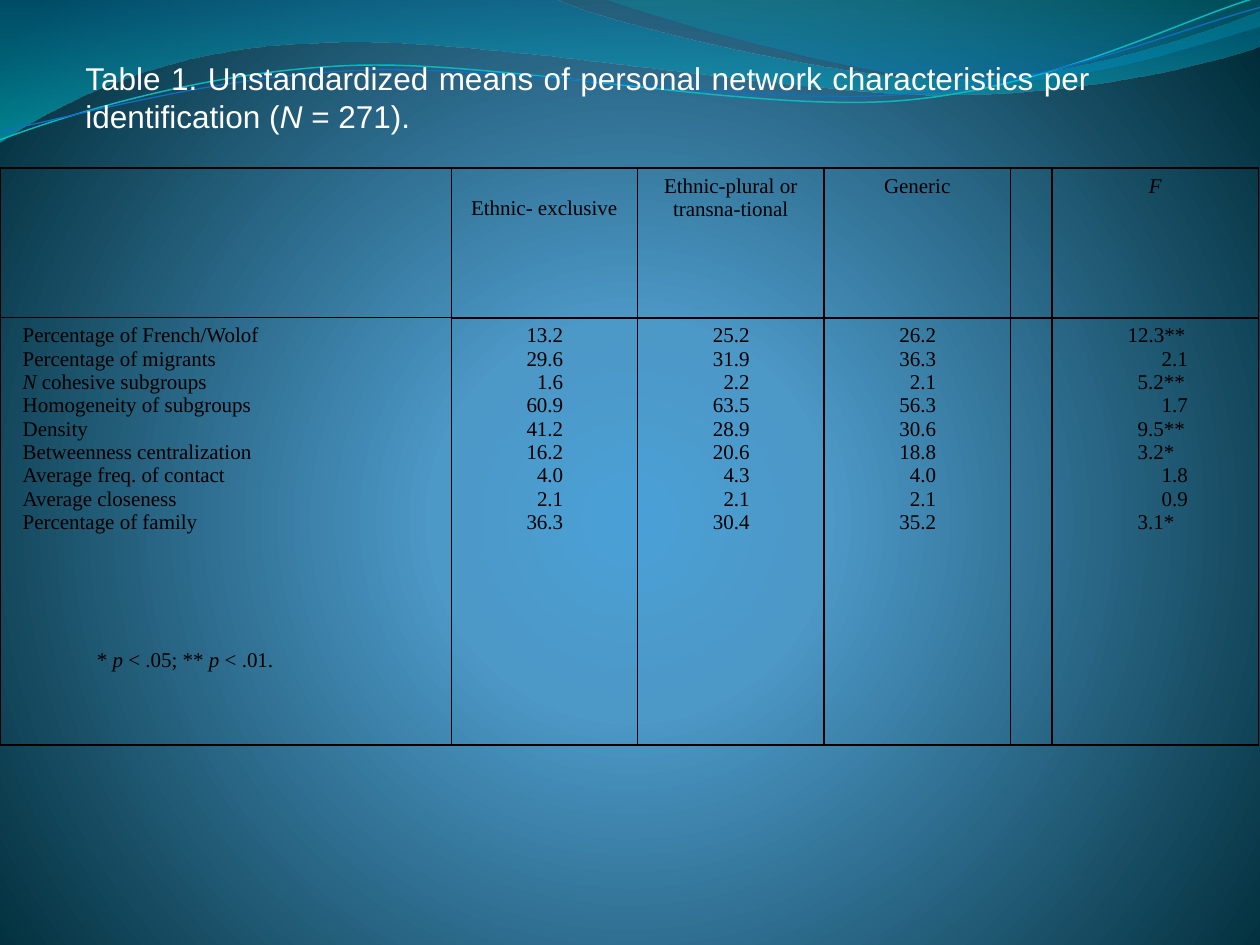
from math import cos, radians, sin

from lxml import etree
from pptx import Presentation
from pptx.dml.color import RGBColor
from pptx.enum.text import MSO_ANCHOR, MSO_AUTO_SIZE, PP_ALIGN
from pptx.oxml.ns import qn
from pptx.util import Inches, Pt

CENTER, JUSTIFY = PP_ALIGN.CENTER, PP_ALIGN.JUSTIFY
LEFT, RIGHT = PP_ALIGN.LEFT, PP_ALIGN.RIGHT
MIDDLE = MSO_ANCHOR.MIDDLE
GROW = MSO_AUTO_SIZE.SHAPE_TO_FIT_TEXT
TILT = 357.3

COL_WIDTHS = [3.58, 1.48, 1.48, 1.48, 0.33, 1.64]
ROW_HEIGHTS = [1.19, 3.39]
HEADERS = ["", "Ethnic- exclusive", "Ethnic-plural or transna-tional", "Generic", "", "_F_"]
ROWS = [
    ("Percentage of French/Wolof", "13.2", "25.2", "26.2", "12.3**"),
    ("Percentage of migrants", "29.6", "31.9", "36.3", "2.1"),
    ("_N_ cohesive subgroups", "1.6", "2.2", "2.1", "5.2**"),
    ("Homogeneity of subgroups", "60.9", "63.5", "56.3", "1.7"),
    ("Density", "41.2", "28.9", "30.6", "9.5**"),
    ("Betweenness centralization", "16.2", "20.6", "18.8", "3.2*"),
    ("Average freq. of contact", "4.0", "4.3", "4.0", "1.8"),
    ("Average closeness", "2.1", "2.1", "2.1", "0.9"),
    ("Percentage of family", "36.3", "30.4", "35.2", "3.1*"),
]

WIDE_WAVE = [
    (0, 0), (4.4, -0.01),
    (4.76, 0.17, 6.64, 0.63, 7.58, 0.63), (8.53, 0.63, 9.58, 0.26, 10, 0.09),
    (10.01, 0.36),
    (9.83, 0.44, 8.7, 0.76, 7.46, 0.75), (6.22, 0.75, 3.82, 0.28, 2.57, 0.34),
    (1.29, 0.36, 0.46, 0.83, -0.01, 1.13), (0, 0),
]
CORNER_WAVE = [
    (4.79, -0.01),
    (5.09, 0.11, 6.82, 0.62, 7.69, 0.65), (8.56, 0.69, 9.61, 0.32, 10, 0.21),
    (10, 0), (4.79, -0.01),
]
TEAL_LINE = [
    (0, 1.11),
    (0.48, 0.93, 1.58, 0.57, 2.77, 0.52), (3.95, 0.47, 5.93, 0.89, 7.13, 0.8),
    (8.33, 0.71, 9.38, 0.15, 9.98, -0.02),
]
BLUE_LINE = [
    (0, 1.04),
    (0.47, 0.96, 1.64, 0.61, 2.83, 0.56), (4.03, 0.51, 5.97, 0.84, 7.17, 0.75),
    (8.36, 0.67, 9.41, 0.21, 10, 0.06),
]


def rgb(value):
    return RGBColor.from_string(value)


def add_node(parent, tag, **attrs):
    node = etree.SubElement(parent, qn(tag))
    for name, value in attrs.items():
        node.set(name, str(value))
    return node


def set_gradient(fill, element, stops, focus=None):
    fill.solid()
    solid = next(element.iter(qn("a:solidFill")))
    grad = etree.Element(qn("a:gradFill"), rotWithShape="1")
    stop_list = add_node(grad, "a:gsLst")
    for position, color, opacity in stops:
        stop = add_node(stop_list, "a:gs", pos=position * 1000)
        clr = add_node(stop, "a:srgbClr", val=color)
        if opacity < 100:
            add_node(clr, "a:alpha", val=opacity * 1000)
    if focus:
        sides = {side: v * 1000 for side, v in zip("ltrb", focus)}
        add_node(add_node(grad, "a:path", path="circle"), "a:fillToRect", **sides)
    else:
        add_node(grad, "a:lin", ang=90 * 60000, scaled=0)
    solid.getparent().replace(solid, grad)


def untilt(segments, center):
    turn = radians(360 - TILT)
    cx, cy = center
    result = []
    for seg in segments:
        moved = []
        for x, y in zip(seg[::2], seg[1::2]):
            dx, dy = x - cx, y - cy
            moved += [cx + dx * cos(turn) - dy * sin(turn), cy + dx * sin(turn) + dy * cos(turn)]
        result.append(tuple(moved))
    return result


def add_outline(s, segments, closed):
    points = [(Inches(x), Inches(y)) for seg in segments for x, y in zip(seg[::2], seg[1::2])]
    builder = s.shapes.build_freeform(*points[0])
    builder.add_line_segments(points[1:], close=closed)
    sp = builder.convert_to_shape()
    sp.shadow.inherit = False
    steps = list(sp.element.iter(qn("a:lnTo")))
    for seg in segments[1:]:
        group, steps = steps[:len(seg) // 2], steps[len(seg) // 2:]
        if len(group) == 3:
            curve = etree.Element(qn("a:cubicBezTo"))
            group[0].addprevious(curve)
            for step in group:
                curve.append(step[0])
                step.getparent().remove(step)
    return sp


def add_wave(s, segments, stops):
    sp = add_outline(s, segments, True)
    sp.line.fill.background()
    set_gradient(sp.fill, sp.element, stops)


def add_curve(s, segments, center, color, width):
    sp = add_outline(s, untilt(segments, center), False)
    sp.rotation = TILT
    sp.fill.background()
    sp.line.color.rgb = rgb(color)
    sp.line.width = Pt(width)


def write_text(p, text, size=12, font="Times New Roman", color="000000", align=LEFT):
    p.alignment = align
    for i, part in enumerate(text.split("_")):
        if part:
            r = p.add_run()
            r.text = part
            r.font.size = Pt(size)
            r.font.name = font
            r.font.color.rgb = rgb(color)
            r.font.italic = i % 2 == 1


def add_label(s, box, text, wrap=True, **style):
    tf = s.shapes.add_textbox(*map(Inches, box)).text_frame
    tf.word_wrap = wrap
    tf.auto_size = GROW
    tf.vertical_anchor = MIDDLE
    write_text(tf.paragraphs[0], text, align=JUSTIFY, **style)


def style_cell(cell, top, bottom):
    tc_pr = cell._tc.get_or_add_tcPr()
    for side, width in (("L", 0.75), ("R", 0.75), ("T", top), ("B", bottom)):
        ln = add_node(tc_pr, f"a:ln{side}", w=Pt(width))
        add_node(add_node(ln, "a:solidFill"), "a:srgbClr", val="000000")
    cell.fill.background()


def fill_column(cell, values, align, indent=None):
    tf = cell.text_frame
    for i, value in enumerate(values):
        p = tf.add_paragraph() if i else tf.paragraphs[0]
        write_text(p, value, align=align)
        if indent:
            p._p.get_or_add_pPr().set("marL", str(Inches(indent(value))))


def f_indent(value):
    if "*" not in value:
        return 0.27
    return 0 if len(value.split(".")[0]) == 2 else 0.08


def add_means_table(s):
    frame = s.shapes.add_table(2, len(COL_WIDTHS), 0, Inches(4 / 3), Inches(10), Inches(4.58))
    table = frame.table
    table.first_row = table.horz_banding = False
    for row, height in zip(table.rows, ROW_HEIGHTS):
        row.height = Inches(height)
    for i, width in enumerate(COL_WIDTHS):
        table.columns[i].width = Inches(width)
        head, body = table.cell(0, i), table.cell(1, i)
        rule = 1 if i else 0.75
        style_cell(head, 1, rule)
        style_cell(body, rule, 1)
        write_text(head.text_frame.paragraphs[0], HEADERS[i], align=CENTER)
    table.cell(0, 1).margin_top = Inches(0.23)

    labels, *means, f_values = zip(*ROWS)
    table.cell(1, 0).margin_left = Inches(0.18)
    fill_column(table.cell(1, 0), labels, JUSTIFY)
    for i, values in enumerate(means, 1):
        table.cell(1, i).margin_right = Inches(0.59)
        fill_column(table.cell(1, i), values, RIGHT)
    table.cell(1, 5).margin_left = Inches(0.6)
    fill_column(table.cell(1, 5), f_values, LEFT, f_indent)


def main():
    prs = Presentation()
    prs.slide_width, prs.slide_height = Inches(10), Inches(7.5)
    s = prs.slides.add_slide(prs.slide_layouts[6])
    set_gradient(s.background.fill, s.element,
                 [(0, "4AA0D6", 100), (25, "4C98C7", 100), (100, "002C38", 100)],
                 focus=(10, 110, 10, 100))
    add_wave(s, WIDE_WAVE, [(0, "0074A1", 45), (100, "00C6CF", 55)])
    add_wave(s, CORNER_WAVE, [(0, "00A1A9", 30), (80, "008BBF", 45)])
    add_curve(s, TEAL_LINE, (4.99, 0.58), "0AB8BF", 0.85)
    add_curve(s, BLUE_LINE, (5, 0.59), "0F6FC6", 0.75)
    add_means_table(s)
    add_label(s, (0.67, 5.08, 1.6, 0.3), "* _p_ < .05; ** _p_ < .01.", wrap=False)
    add_label(s, (0.58, 0.42, 8.17, 0.7),
              "Table 1. Unstandardized means of personal network characteristics "
              "per identification (_N_ = 271).", size=18, font="Arial", color="FFFFFF")
    prs.save("out.pptx")


if __name__ == "__main__":
    main()
